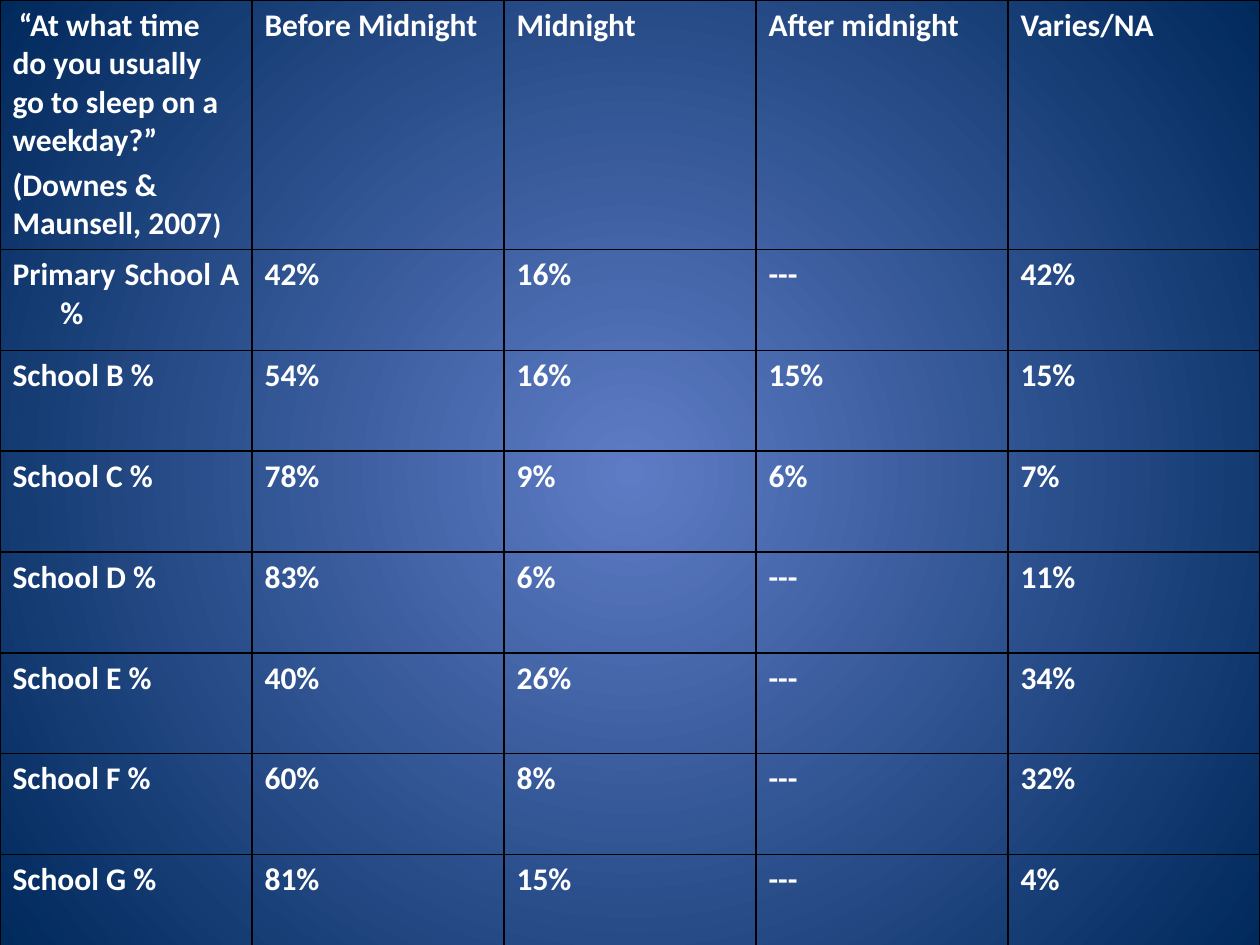
"""Build a slide with a table of weekday bedtimes by school."""
from lxml.etree import SubElement
from pptx import Presentation
from pptx.dml.color import RGBColor
from pptx.enum.text import PP_ALIGN
from pptx.oxml.ns import qn
from pptx.util import Inches, Pt

JUST = PP_ALIGN.JUSTIFY
COLORS = {"text": "FFFFFF", "line": "000000", "mid": "5E7CC5", "edge": "00295C"}
FONT = {"name": "Calibri", "bold": True}
ASK = [
    [(" ", 16), ("“At what time do you usually go to sleep on a weekday?”", 18)],
    [("(Downes & Maunsell, 2007", 18), (")", 16)],
]
ROWS = [
    ("", "Before Midnight", "Midnight", "After midnight", "Varies/NA"),
    ("Primary School A %", "42%", "16%", "---", "42%"),
    ("School B %", "54%", "16%", "15%", "15%"),
    ("School C %", "78%", "9%", "6%", "7%"),
    ("School D %", "83%", "6%", "---", "11%"),
    ("School E %", "40%", "26%", "---", "34%"),
    ("School F %", "60%", "8%", "---", "32%"),
    ("School G %", "81%", "15%", "---", "4%"),
]
WIDTH, HEAD, ROW = 10, 1.88, 0.8
INDENT = Inches(0.38)


def paint(slide):
    fill = slide.background.fill
    fill.gradient()
    for stop, key, pos in zip(fill.gradient_stops, ("mid", "edge"), (0, 1)):
        stop.color.rgb = RGBColor.from_string(COLORS[key])
        stop.position = pos
    grad = slide._element.find(".//" + qn("a:gradFill"))
    grad.remove(grad.find(qn("a:lin")))
    ring = SubElement(grad, qn("a:path"), {"path": "circle"})
    SubElement(ring, qn("a:fillToRect"), dict.fromkeys("ltrb", "50000"))


def add_run(para, text, size):
    run = para.add_run()
    run.text = text
    for key, value in FONT.items():
        setattr(run.font, key, value)
    run.font.size = Pt(size)
    run.font.color.rgb = RGBColor.from_string(COLORS["text"])


def write_ask(frame):
    for i, runs in enumerate(ASK):
        para = frame.add_paragraph() if i else frame.paragraphs[0]
        gap = SubElement(para._p.get_or_add_pPr(), qn("a:spcBef"))
        SubElement(gap, qn("a:spcPct"), {"val": "20000"})
        for text, size in runs:
            add_run(para, text, size)


def write_cell(frame, text):
    para = frame.paragraphs[0]
    para.alignment = JUST
    props = para._p.get_or_add_pPr()
    props.set("marL", str(INDENT))
    props.set("indent", str(-INDENT))
    add_run(para, text, 18)


def frame_cell(cell):
    props = cell._tc.get_or_add_tcPr()
    for side in "LRTB":
        line = SubElement(props, qn("a:ln" + side), {"w": str(Pt(1))})
        solid = SubElement(line, qn("a:solidFill"))
        SubElement(solid, qn("a:srgbClr"), {"val": COLORS["line"]})
    cell.fill.background()


def add_grid(slide):
    rows, cols = len(ROWS), len(ROWS[0])
    high = HEAD + ROW * (rows - 1)
    grid = slide.shapes.add_table(rows, cols, 0, 0, Inches(WIDTH), Inches(high)).table
    grid.first_row = grid.horz_banding = False
    for col in grid.columns:
        col.width = Inches(WIDTH / cols)
    for r, texts in enumerate(ROWS):
        grid.rows[r].height = Inches(ROW if r else HEAD)
        for c, text in enumerate(texts):
            cell = grid.cell(r, c)
            frame_cell(cell)
            if text:
                write_cell(cell.text_frame, text)
            else:
                write_ask(cell.text_frame)


def main():
    deck = Presentation()
    deck.slide_width, deck.slide_height = Inches(WIDTH), Inches(7.5)
    slide = deck.slides.add_slide(deck.slide_layouts[6])
    paint(slide)
    add_grid(slide)
    deck.save("out.pptx")


if __name__ == "__main__":
    main()
